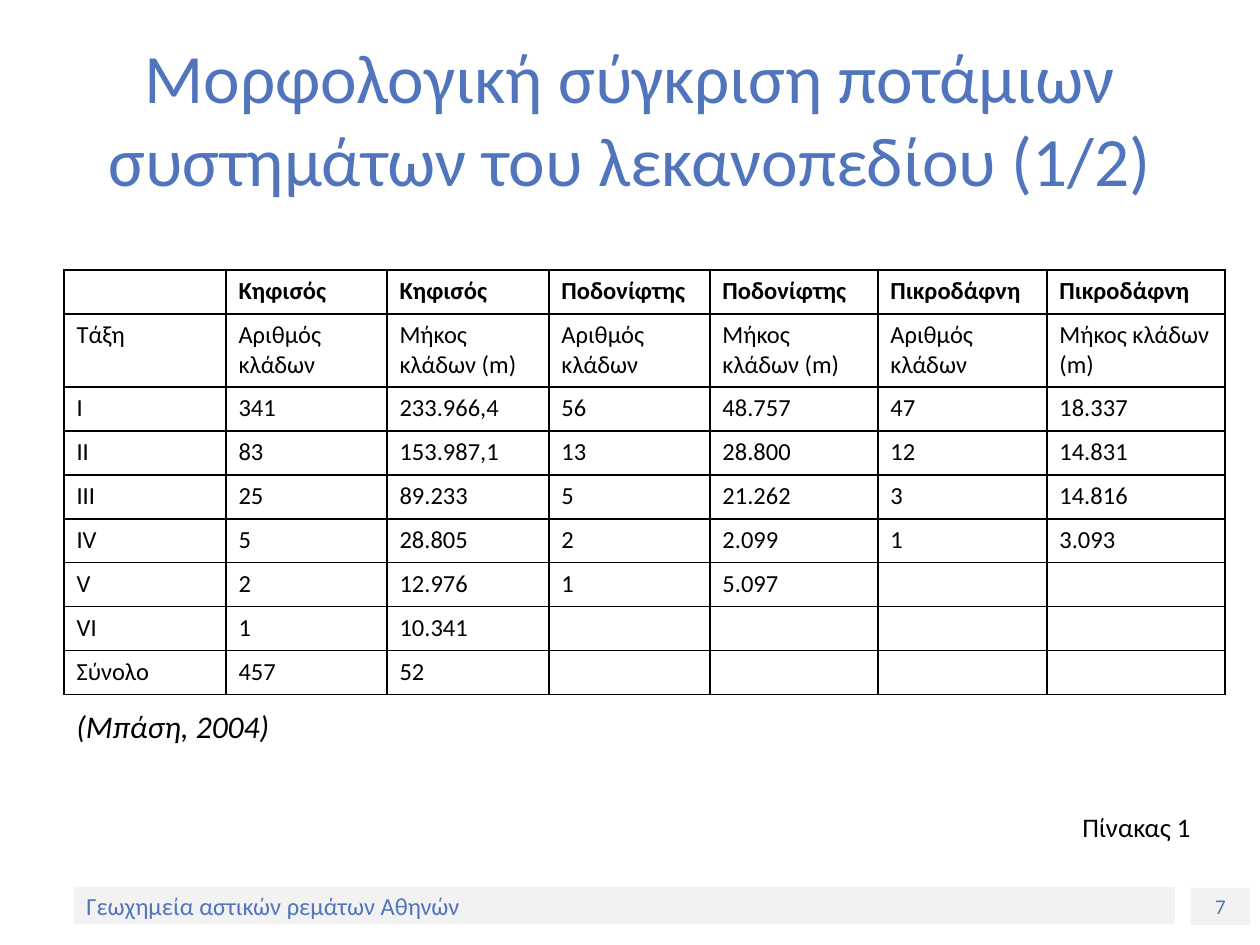
"""Build the slide comparing the river systems of the Athens basin."""
import pptx
import pptx.dml.color
import pptx.enum.shapes
import pptx.enum.text
import pptx.oxml
import pptx.oxml.ns
import pptx.util

PX = 914400 // 126
BLUE, GREY, BLACK, WHITE = "5075BC", "F2F2F2", "000000", "FFFFFF"
ALIGN = pptx.enum.text.PP_ALIGN
MIDDLE = pptx.enum.text.MSO_ANCHOR.MIDDLE


def rgb(color):
    return pptx.dml.color.RGBColor.from_string(color)


def write(tf, text, size, color, align=ALIGN.LEFT, bold=False, italic=False):
    p = tf.paragraphs[0]
    p.alignment = align
    p.font.name = "Calibri"
    p.font.size = pptx.util.Pt(size)
    p.font.bold = bold
    p.font.italic = italic
    p.font.color.rgb = rgb(color)
    if text:
        p.add_run().text = text
    else:
        p._p.get_or_add_endParaRPr().set("sz", str(size * 100))


prs = pptx.Presentation()
prs.slide_width, prs.slide_height = 1260 * PX, 945 * PX
s = prs.slides.add_slide(prs.slide_layouts[5])

title = s.shapes.title
title.left, title.top, title.width, title.height = 63 * PX, 38 * PX, 1134 * PX, 158 * PX
title.text_frame.vertical_anchor = MIDDLE
write(title.text_frame, "Μορφολογική σύγκριση ποτάμιων συστημάτων του λεκανοπεδίου (1/2)",
      39.6, BLUE, ALIGN.CENTER)

labels = [
    ("7", 1191, 888, 59, 37, GREY, 12, BLUE, ALIGN.CENTER),
    ("Γεωχημεία αστικών ρεμάτων Αθηνών", 74, 887, 1101, 37, GREY, 14, BLUE, ALIGN.LEFT),
    ("Πίνακας 1", 1070, 807, 149, 39, WHITE, 15.3, BLACK, ALIGN.LEFT),
]
for text, x, y, w, h, fill, size, color, align in labels:
    sp = s.shapes.add_shape(pptx.enum.shapes.MSO_SHAPE.RECTANGLE, x * PX, y * PX, w * PX, h * PX)
    sp.shadow.inherit = False
    sp.fill.solid()
    sp.fill.fore_color.rgb = rgb(fill)
    sp.line.fill.background()
    sp.text_frame.vertical_anchor = MIDDLE
    write(sp.text_frame, text, size, color, align)

count, length = "Αριθμός κλάδων", "Μήκος κλάδων (m)"
rows = [
    ["", "Κηφισός", "Κηφισός", "Ποδονίφτης", "Ποδονίφτης", "Πικροδάφνη", "Πικροδάφνη"],
    ["Τάξη"] + [count, length] * 3,
    ["Ι", "341", "233.966,4", "56", "48.757", "47", "18.337"],
    ["ΙΙ", "83", "153.987,1", "13", "28.800", "12", "14.831"],
    ["ΙΙΙ", "25", "89.233", "5", "21.262", "3", "14.816"],
    ["IV", "5", "28.805", "2", "2.099", "1", "3.093"],
    ["V", "2", "12.976", "1", "5.097", "", ""],
    ["VI", "1", "10.341", "", "", "", ""],
    ["Σύνολο", "457", "52", "", "", "", ""],
]
widths = [162, 161, 162, 161, 168, 169, 178]
heights = [44, 73] + [44] * 7
table = s.shapes.add_table(len(rows), len(widths), 64 * PX, 270 * PX,
                           sum(widths) * PX, sum(heights) * PX).table
table.first_row = table.horz_banding = False
for column, width in zip(table.columns, widths):
    column.width = width * PX
for row, height in zip(table.rows, heights):
    row.height = height * PX
for i, values in enumerate(rows):
    for j, value in enumerate(values):
        cell = table.cell(i, j)
        cell.fill.background()
        write(cell.text_frame, value, 14, BLACK, bold=i == 0)
        tcPr = cell._tc.get_or_add_tcPr()
        for k, side in enumerate(("lnL", "lnR", "lnT", "lnB")):
            tcPr.insert(k, pptx.oxml.parse_xml(
                f'<a:{side} {pptx.oxml.ns.nsdecls("a")} w="12700"><a:solidFill>'
                f'<a:srgbClr val="{BLACK}"/></a:solidFill></a:{side}>'))

source = s.shapes.add_textbox(64 * PX, 701 * PX, 229 * PX, 50 * PX)
source.text_frame.word_wrap = False
write(source.text_frame, "(Μπάση, 2004)", 18, BLACK, italic=True)

prs.save("out.pptx")
